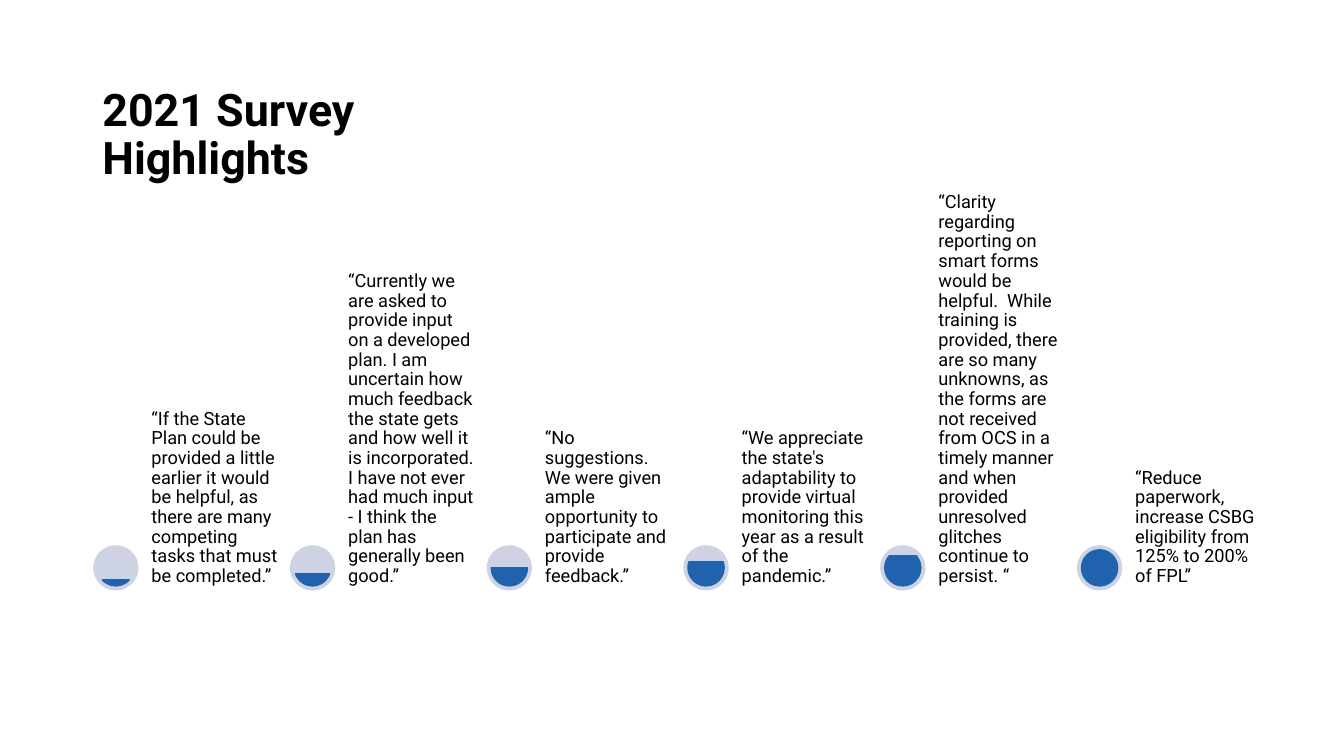
from math import asin, degrees

from pptx import Presentation
from pptx.dml.color import RGBColor
from pptx.enum.shapes import MSO_SHAPE
from pptx.enum.text import MSO_ANCHOR
from pptx.util import Cm, Pt

OVAL = MSO_SHAPE.OVAL
CHORD = MSO_SHAPE.CHORD
BOTTOM = MSO_ANCHOR.BOTTOM
FONT = "Roboto"
COLORS = {"text": "000000", "ring": "CDD3E3", "level": "2162AE"}
QUOTES = [
    "“If the State Plan could be provided a little earlier it would be helpful, "
    "as there are many competing tasks that must be completed.”",
    "“Currently we are asked to provide input on a developed plan. I am uncertain "
    "how much feedback the state gets and how well it is incorporated. I have not "
    "ever had much input - I think the plan has generally been good.”",
    "“No suggestions. We were given ample opportunity to participate and provide "
    "feedback.”",
    "“We appreciate the state's adaptability to provide virtual monitoring this "
    "year as a result of the pandemic.”",
    "“Clarity regarding reporting on smart forms would be helpful.  While training "
    "is provided, there are so many unknowns, as the forms are not received from "
    "OCS in a timely manner and when provided unresolved glitches continue to "
    "persist. “",
    "“Reduce paperwork, increase CSBG eligibility from 125% to 200% of FPL”",
]


def color(name):
    return RGBColor.from_string(COLORS[name])


def add_text(slide, box, text, size, inset, bold=False):
    frame = slide.shapes.add_textbox(*map(Cm, box)).text_frame
    frame.word_wrap = True
    frame.vertical_anchor = BOTTOM
    frame.margin_left = frame.margin_right = Cm(inset[0])
    frame.margin_top = frame.margin_bottom = Cm(inset[1])
    para = frame.paragraphs[0]
    para.text = text
    para.line_spacing = 0.9
    para.font.name = FONT
    para.font.size = Pt(size)
    para.font.bold = bold
    para.font.color.rgb = color("text")


def add_disc(slide, kind, box, fill):
    disc = slide.shapes.add_shape(kind, *map(Cm, box))
    disc.shadow.inherit = False
    disc.fill.solid()
    disc.fill.fore_color.rgb = color(fill)
    return disc


def add_gauge(slide, left, top, size, share):
    ring = add_disc(slide, OVAL, (left, top, size, size), "ring")
    ring.line.fill.background()
    pad = size / 10
    inner = size - 2 * pad
    level = add_disc(slide, CHORD, (left + pad, top + pad, inner, inner), "level")
    level.line.color.rgb = color("level")
    level.line.width = Pt(1)
    angle = degrees(asin(1 - 2 * share))
    level.adjustments[0] = angle % 360 * 0.6
    level.adjustments[1] = (180 - angle) * 0.6


def add_quotes(slide, left, top, width, height):
    count = len(QUOTES)
    gap = 0.2
    pitch = (width + gap) / count
    shift = height * 1.2
    for i, quote in enumerate(QUOTES):
        x = left + i * pitch
        add_gauge(slide, x, top, height, (i + 1) / count)
        box = (x + shift, top, pitch - gap - shift, height)
        add_text(slide, box, quote, 13, (0.1, 0.1))


def main():
    deck = Presentation()
    deck.slide_width = Cm(33.87)
    deck.slide_height = Cm(19.05)
    slide = deck.slides.add_slide(deck.slide_layouts[6])
    add_text(slide, (2.33, 1.27, 10.92, 3.5), "2021 Survey Highlights", 32,
             (0.25, 0.13), True)
    add_quotes(slide, 2.35, 13.74, 29.55, 1.14)
    deck.save("out.pptx")


if __name__ == "__main__":
    main()
